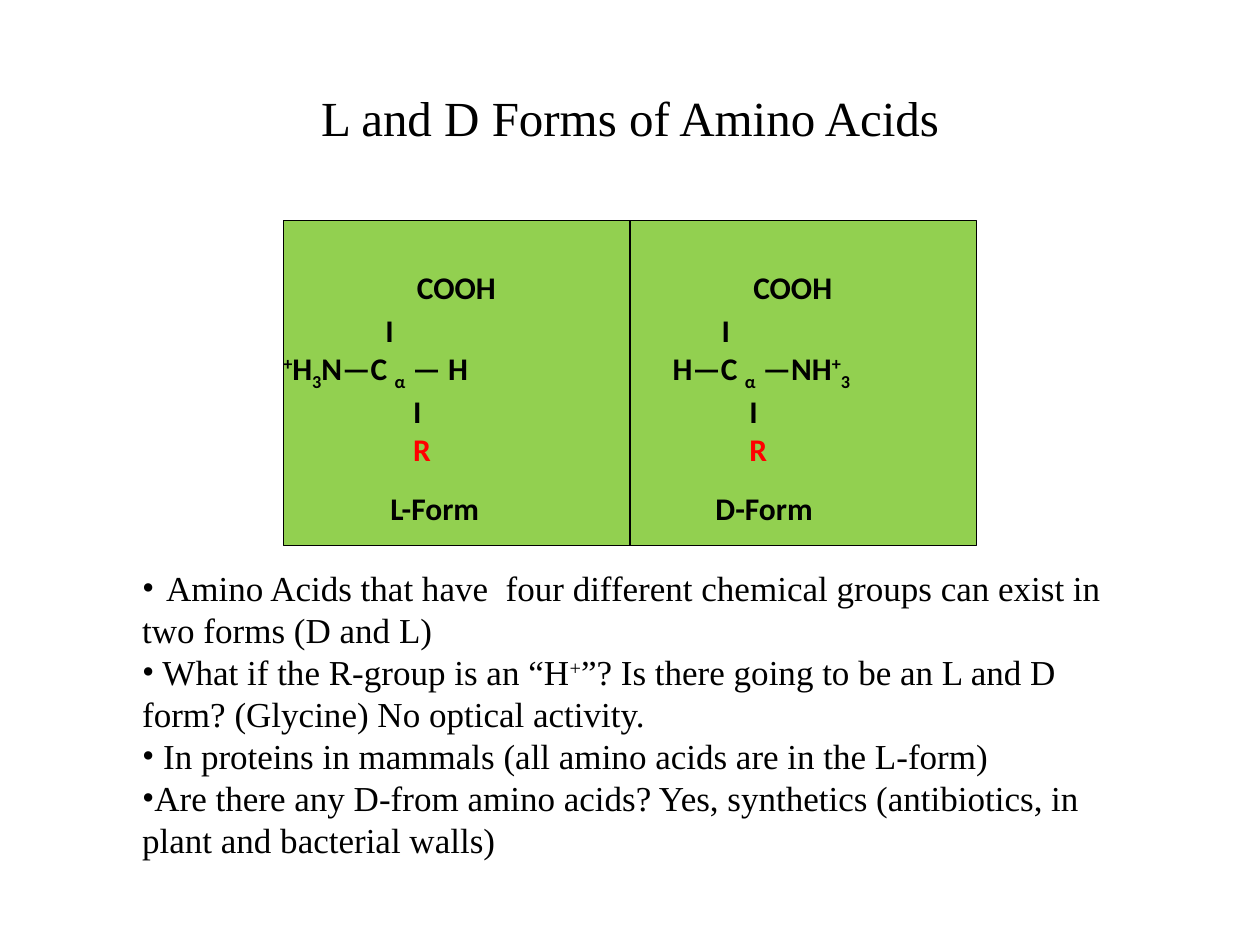
from lxml import etree
from pptx import Presentation
from pptx.dml.color import RGBColor
from pptx.enum.shapes import MSO_SHAPE
from pptx.enum.text import MSO_ANCHOR, PP_ALIGN
from pptx.oxml.ns import qn
from pptx.util import Inches, Pt

RECT = MSO_SHAPE.RECTANGLE
MIDDLE = MSO_ANCHOR.MIDDLE
CENTER = PP_ALIGN.CENTER
COLORS = {"text": "000000", "panel": "92D050", "residue": "FF0000"}
SERIF, SANS, CASUAL = "Times New Roman", "Calibri", "Comic Neue"
SUP, SUB = 30000, -25000


def add_box(slide, x, y, w, h, wrap=True):
    """Add an empty text box and return its text frame."""
    tf = slide.shapes.add_textbox(Inches(x), Inches(y), Inches(w), Inches(h)).text_frame
    tf.word_wrap = wrap
    return tf


def add_run(p, text, size, font, bold=False, color="text", base=0):
    """Add one formatted run to a paragraph."""
    r = p.add_run()
    r.text = text
    r.font.size = Pt(size)
    r.font.name = font
    r.font.bold = bold
    r.font.color.rgb = RGBColor.from_string(COLORS[color])
    if base:
        r.font._element.set("baseline", str(base))


def add_lines(tf, lines):
    """Fill a frame with bold formula lines, each an indent and its runs."""
    for i, (indent, runs) in enumerate(lines):
        p = tf.paragraphs[0] if i == 0 else tf.add_paragraph()
        pPr = p._p.get_or_add_pPr()
        pPr.set("marL", str(Inches(indent)))
        pPr.set("indent", "0")
        for text, style in runs:
            add_run(p, text, 18, SANS, True, **style)


def add_title(slide, x, y, w, h):
    """Add the centred slide title."""
    tf = add_box(slide, x, y, w, h)
    tf.vertical_anchor = MIDDLE
    p = tf.paragraphs[0]
    p.alignment = CENTER
    add_run(p, "L and D Forms of Amino Acids", 28, SERIF)


def add_panel(slide, x, y, w, h):
    """Add the green background of one form."""
    sp = slide.shapes.add_shape(RECT, Inches(x), Inches(y), Inches(w), Inches(h))
    sp.shadow.inherit = False
    sp.fill.solid()
    sp.fill.fore_color.rgb = RGBColor.from_string(COLORS["panel"])
    sp.line.color.rgb = RGBColor.from_string(COLORS["text"])
    sp.line.width = Pt(0.75)


def add_form(slide, x, y, name, name_x, row_indent, row):
    """Add the structural formula and name of one form."""
    add_lines(add_box(slide, x, y + 0.67, 5, 1.3), [
        (1.46, [("I", {})]),
        (row_indent, row),
        (1.68, [("I", {})]),
        (1.68, [("R", {"color": "residue"})]),
    ])
    add_lines(add_box(slide, x + 1.71, y + 0.33, 0.95, 0.4, False), [(0, [("COOH", {})])])
    add_lines(add_box(slide, name_x, y + 2.08, 1.33, 0.4), [(0, [(name, {})])])


def add_bullets(slide, x, y, w, h, items):
    """Add the bulleted remarks below the panels."""
    tf = add_box(slide, x, y, w, h)
    for i, runs in enumerate(items):
        p = tf.paragraphs[0] if i == 0 else tf.add_paragraph()
        pPr = p._p.get_or_add_pPr()
        etree.SubElement(pPr, qn("a:buFont")).set("typeface", SERIF)
        etree.SubElement(pPr, qn("a:buChar")).set("char", "•")
        for text, font, base in runs:
            add_run(p, text, 20, font, base=base)


def main():
    """Build the slide and save it."""
    prs = Presentation()
    prs.slide_width, prs.slide_height = Inches(10), Inches(7.5)
    slide = prs.slides.add_slide(prs.slide_layouts[6])
    add_title(slide, 0.5, 0.3, 9, 1.25)

    top, width = 1.75, 2.75
    for i in range(2):
        add_panel(slide, 2.25 + i * width, top, width, 2.58)
    sup, sub = {"base": SUP}, {"base": SUB}
    add_form(slide, 1.5, top, "L-Form", 3, 0.65, [
        ("+", sup), ("H", {}), ("3", sub), ("N—C ", {}), ("α", sub), (" — H", {})])
    add_form(slide, 4.17, top, "D-Form", 5.58, 1.07, [
        ("H—C ", {}), ("α", sub), (" —NH", {}), ("+", sup), ("3", sub)])

    add_bullets(slide, 1.03, 4.45, 7.93, 2.46, [
        [(" ", CASUAL, 0),
         ("Amino Acids that have  four different chemical groups can exist in "
          "two forms (D and L)", SERIF, 0)],
        [(" What if the R-group is an “H", SERIF, 0), ("+", SERIF, SUP),
         ("”? Is there going to be an L and D form? (Glycine) "
          "No optical activity.", SERIF, 0)],
        [(" In proteins in mammals (all amino acids are in the L-form)", SERIF, 0)],
        [("Are there any D-from amino acids? Yes, synthetics (antibiotics, in "
          "plant and bacterial walls)", SERIF, 0)],
    ])
    prs.save("out.pptx")


if __name__ == "__main__":
    main()
